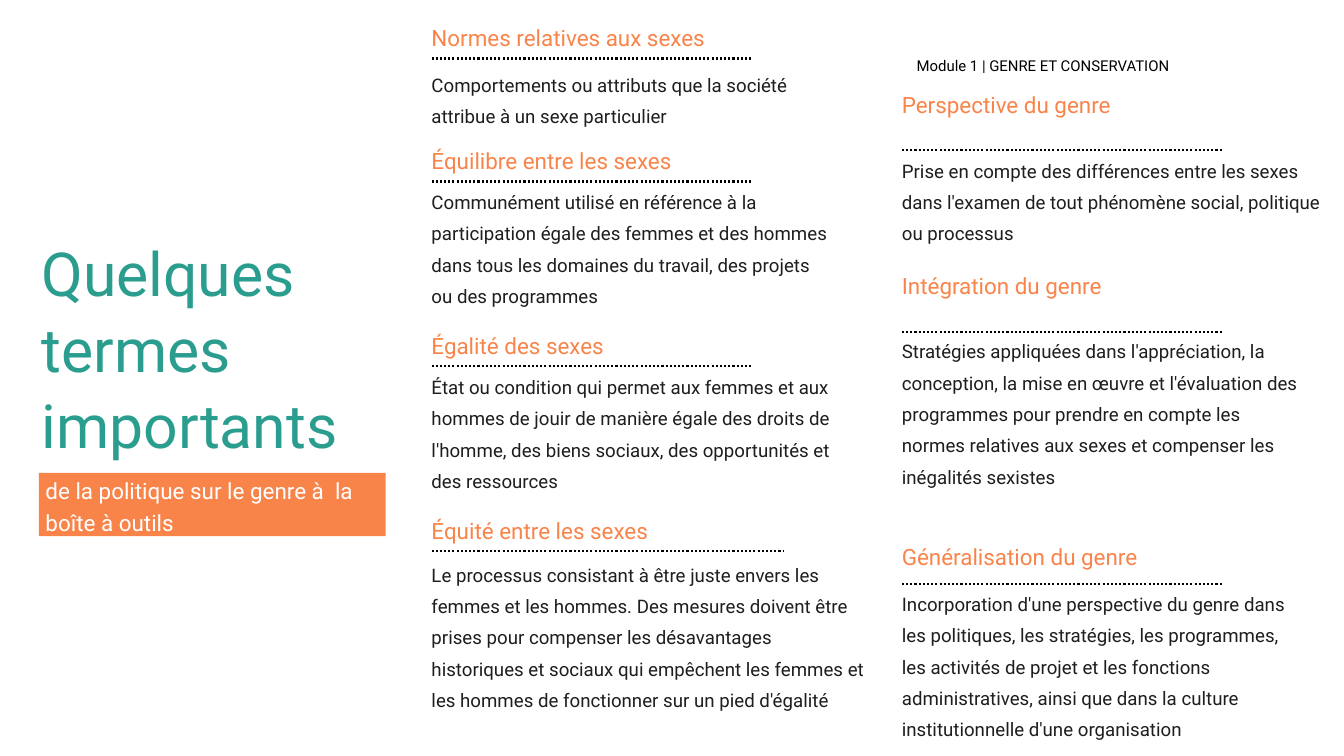
from lxml import etree
from pptx import Presentation
from pptx.dml.color import RGBColor
from pptx.enum.dml import MSO_LINE
from pptx.enum.shapes import MSO_CONNECTOR, MSO_SHAPE
from pptx.enum.text import MSO_ANCHOR, MSO_AUTO_SIZE as AutoSize, PP_ALIGN
from pptx.oxml.ns import qn
from pptx.util import Cm, Pt

ORANGE, TEAL, INK, BLACK, WHITE = "F9844A", "2A9D8F", "1E1E1E", "000000", "FFFFFF"
LINE_HEIGHT = 1.19

LEFT_TERMS = [
    (0.74, 1.47, 1.7, 12.14, 15.04, 2, "Normes relatives aux sexes",
     "Comportements ou attributs que la société attribue à un sexe particulier"),
    (5.41, 1.45, 1.47, 12.14, 15.04, 4, "Équilibre entre les sexes",
     "Communément utilisé en référence à la participation égale des femmes et des hommes "
     "dans tous les domaines du travail, des projets ou des programmes"),
    (12.4, 1.45, 1.47, 12.14, 16.08, 4, "Égalité des sexes",
     "État ou condition qui permet aux femmes et aux hommes de jouir de manière égale des "
     "droits de l'homme, des biens sociaux, des opportunités et des ressources"),
    (19.38, 1.45, 1.58, 13.34, 16.51, 6, "Équité entre les sexes",
     "Le processus consistant à être juste envers les femmes et les hommes. Des mesures "
     "doivent être prises pour compenser les désavantages historiques et sociaux qui "
     "empêchent les femmes et les hommes de fonctionner sur un pied d'égalité"),
]
RIGHT_TERMS = [
    (3.28, 2.38, 2.41, 12.14, 15.93, 3, "Perspective du genre",
     "Prise en compte des différences entre les sexes dans l'examen de tout phénomène "
     "social, politique ou processus"),
    (10.13, 2.42, 2.39, 12.14, 15.04, 5, "Intégration du genre",
     "Stratégies appliquées dans l'appréciation, la conception, la mise en œuvre et "
     "l'évaluation des programmes pour prendre en compte les normes relatives aux sexes "
     "et compenser les inégalités sexistes"),
    (20.37, 1.7, 1.7, 12.14, 15.04, 5, "Généralisation du genre",
     "Incorporation d'une perspective du genre dans les politiques, les stratégies, les "
     "programmes, les activités de projet et les fonctions administratives, ainsi que dans "
     "la culture institutionnelle d'une organisation"),
]


def rgb(value):
    return RGBColor.from_string(value)


def fill_text(holder, text, size, color, spacing=33.6, inset=0):
    frame = holder.text_frame
    frame.word_wrap = True
    frame.auto_size = AutoSize.SHAPE_TO_FIT_TEXT
    frame.vertical_anchor = MSO_ANCHOR.TOP
    frame.margin_left = Cm(inset)
    frame.margin_top = frame.margin_right = frame.margin_bottom = 0
    paragraph = frame.paragraphs[0]
    paragraph.text = text
    paragraph.alignment = PP_ALIGN.LEFT
    paragraph.line_spacing = Pt(spacing)
    paragraph.font.name = "Roboto"
    paragraph.font.size = Pt(size)
    paragraph.font.color.rgb = rgb(color)


def add_text(slide, left, top, width, height, text, size, color, spacing=33.6):
    holder = slide.shapes.add_textbox(Cm(left), Cm(top), Cm(width), Cm(height))
    fill_text(holder, text, size, color, spacing)


def add_dotted_rule(slide, left, top, width):
    rule = slide.shapes.add_connector(
        MSO_CONNECTOR.STRAIGHT, Cm(left), Cm(top), Cm(left + width), Cm(top))
    rule.line.color.rgb = rgb(BLACK)
    rule.line.width = Pt(2.25)
    rule.line.dash_style = MSO_LINE.ROUND_DOT
    etree.SubElement(rule._element.spPr, qn("a:effectLst"))


def add_title_panel(slide, left, top):
    add_text(slide, left + 0.1, top, 14.3, 8.74,
             "Quelques termes importants", 65, TEAL, 81.6)
    subtitle = slide.shapes.add_shape(
        MSO_SHAPE.RECTANGLE, Cm(left), Cm(top + 9.09), Cm(13.11), Cm(2.39))
    subtitle.shadow.inherit = False
    subtitle.fill.solid()
    subtitle.fill.fore_color.rgb = rgb(ORANGE)
    subtitle.line.fill.background()
    fill_text(subtitle, "de la politique sur le genre à  la boîte à outils",
              24, WHITE, inset=0.25)


def add_terms(slide, left, terms):
    for top, rule_gap, body_gap, rule_width, body_width, lines, term, definition in terms:
        add_dotted_rule(slide, left, top + rule_gap, rule_width)
        add_text(slide, left, top + body_gap, body_width, lines * LINE_HEIGHT,
                 definition, 20, INK)
        add_text(slide, left, top, rule_width, LINE_HEIGHT, term, 24, ORANGE)


def main():
    deck = Presentation()
    deck.slide_width, deck.slide_height = Cm(50.8), Cm(28.58)
    slide = deck.slides.add_slide(deck.slide_layouts[6])
    add_title_panel(slide, 1.47, 8.79)
    add_terms(slide, 16.31, LEFT_TERMS)
    add_terms(slide, 34.09, RIGHT_TERMS)
    add_text(slide, 34.65, 2.01, 15.37, 0.76,
             "Module 1 | GENRE ET CONSERVATION", 16, BLACK, 22.4)
    deck.save("out.pptx")


if __name__ == "__main__":
    main()
